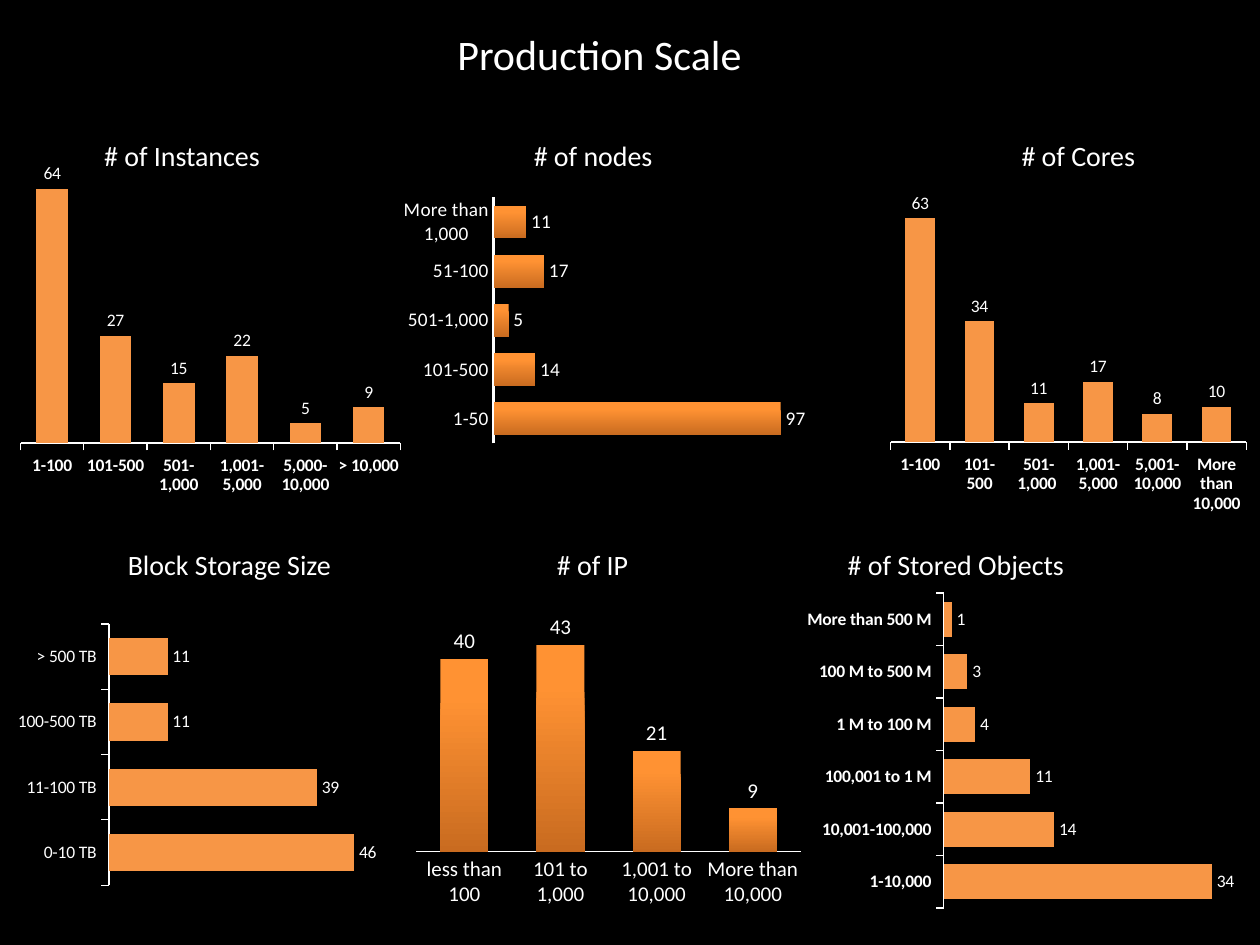
import pptx
import pptx.chart.data
import pptx.dml.color
import pptx.enum.chart
import pptx.enum.text
import pptx.util
from dataclasses import dataclass

SLIDE_W, SLIDE_H = 10, 7.5
FONT = "Calibri"
WHITE, BLACK, ORANGE = "FFFFFF", "000000", "F79646"
GLOW_TOP, GLOW_BOTTOM = "FF9233", "C96B20"
TOP_ROW, BOTTOM_ROW = 14, 57.33  # percent of the slide height
HEADING_HEIGHT = 4.93
PLOT_MARGIN = 0.02

COLUMN = pptx.enum.chart.XL_CHART_TYPE.COLUMN_CLUSTERED
BAR = pptx.enum.chart.XL_CHART_TYPE.BAR_CLUSTERED


@dataclass
class Panel:
    heading: str
    box: tuple            # left, top, width, height in percent of the slide
    heading_span: tuple   # shift and width as shares of the panel width
    chart_drop: float     # chart top as a share of the panel height
    kind: object
    counts: dict
    axis_max: int
    label_share: float    # part of the chart kept for category labels
    gap: int
    size: int = 10
    bold: bool = False
    ticks: bool = True
    glow: bool = False
    axis_width: float = 0.75
    centered: bool = False


PANELS = [
    Panel("# of Cores", (70.1, TOP_ROW, 29.4, 41.33), (0.34, 0.38), 0.14, COLUMN,
          {"1-100": 63, "101-500": 34, "501-1,000 ": 11, "1,001-5,000": 17,
           "5,001-10,000": 8, "More than 10,000": 10},
          70, 0.22, 100, bold=True),
    Panel("# of Instances", (1, TOP_ROW, 31.4, 39.07), (0.2, 0.46), 0.07, COLUMN,
          {"1-100": 64, "101-500": 27, "501-1,000": 15, "1,001-5,000": 22,
           "5,000-10,000": 5, "> 10,000": 9},
          70, 0.15, 100, bold=True),
    Panel("# of Stored Objects", (63.3, BOTTOM_ROW, 37.4, 39.47), (0.08, 0.52), 0.12, BAR,
          {"1-10,000": 34, "10,001-100,000": 14, "100,001 to 1 M": 11,
           "1 M to 100 M": 4, "100 M to 500 M": 3, "More than 500 M": 1},
          40, 0.29, 50, bold=True),
    Panel("Block Storage Size ", (1, BOTTOM_ROW, 29.4, 36.93), (0.27, 0.63), 0.22, BAR,
          {"0-10 TB": 46, "11-100 TB": 39, "100-500 TB": 11, "> 500 TB": 11},
          50, 0.24, 75, centered=True),
    Panel("# of IP", (32.4, BOTTOM_ROW, 31.8, 39.33), (0.34, 0.24), 0.17, COLUMN,
          {"less than 100": 40, "101 to 1,000": 43, "1,001 to 10,000": 21,
           "More than 10,000": 9},
          50, 0.18, 100, size=12, ticks=False, glow=True),
    Panel("# of nodes", (31.5, TOP_ROW, 36.6, 33.47), (0.27, 0.32), 0.19, BAR,
          {"1-50": 97, "101-500": 14, "501-1,000": 5, "51-100": 17,
           "More than 1,000": 11},
          120, 0.19, 50, size=11, ticks=False, glow=True, axis_width=1.5),
]


def color(hex_string):
    return pptx.dml.color.RGBColor.from_string(hex_string)


def place(left, top, width, height):
    """Turn percentages of the slide into lengths."""
    return [pptx.util.Inches(share * side / 100) for share, side in
            zip((left, top, width, height), (SLIDE_W, SLIDE_H) * 2)]


def style_font(font, size, bold=False):
    font.name = FONT
    font.size = pptx.util.Pt(size)
    font.bold = bold
    font.color.rgb = color(WHITE)


def write_line(frame, text, size, centered=False):
    frame.word_wrap = False
    frame.auto_size = pptx.enum.text.MSO_AUTO_SIZE.SHAPE_TO_FIT_TEXT
    frame.vertical_anchor = pptx.enum.text.MSO_ANCHOR.TOP
    align = pptx.enum.text.PP_ALIGN
    paragraph = frame.paragraphs[0]
    paragraph.alignment = align.CENTER if centered else align.LEFT
    run = paragraph.add_run()
    run.text = text
    style_font(run.font, size)


def fix_plot(chart, panel):
    """Set the inner plot area, leaving room for the category labels."""
    full = 1 - 2 * PLOT_MARGIN
    rest = full - panel.label_share
    if panel.kind == BAR:
        shares = (PLOT_MARGIN + panel.label_share, PLOT_MARGIN, rest, full)
    else:
        shares = (PLOT_MARGIN, PLOT_MARGIN, full, rest)
    settings = [("layoutTarget", "inner"), ("xMode", "edge"), ("yMode", "edge")]
    settings += zip("xywh", (f"{share:.2f}" for share in shares))
    parts = "".join(f'<c:{tag} val="{value}"/>' for tag, value in settings)
    layout = pptx.oxml.parse_xml(
        '<c:layout xmlns:c="http://schemas.openxmlformats.org/drawingml/2006/chart">'
        f"<c:manualLayout>{parts}</c:manualLayout></c:layout>")
    plot_area = chart.plots[0]._element.getparent()
    for old in plot_area.findall(layout.tag):
        plot_area.remove(old)
    plot_area.insert(0, layout)


def style_axes(chart, panel):
    tick = pptx.enum.chart.XL_TICK_MARK
    categories = chart.category_axis
    categories.has_major_gridlines = False
    categories.major_tick_mark = tick.OUTSIDE if panel.ticks else tick.NONE
    categories.format.line.color.rgb = color(WHITE)
    categories.format.line.width = pptx.util.Pt(panel.axis_width)
    style_font(categories.tick_labels.font, panel.size, panel.bold)
    values = chart.value_axis
    values.has_major_gridlines = False
    values.minimum_scale, values.maximum_scale = 0, panel.axis_max
    values.visible = False


def style_bars(plot, panel):
    plot.vary_by_categories = False
    plot.gap_width = panel.gap
    plot.overlap = -25 if panel.glow else 0
    fill = plot.series[0].format.fill
    if panel.glow:
        fill.gradient()
        fill.gradient_angle = 270
        top, bottom = fill.gradient_stops
        top.color.rgb, bottom.color.rgb = color(GLOW_TOP), color(GLOW_BOTTOM)
        top.position = 0.2
    else:
        fill.solid()
        fill.fore_color.rgb = color(ORANGE)
    plot.has_data_labels = True
    labels = plot.data_labels
    labels.show_value = True
    labels.position = pptx.enum.chart.XL_LABEL_POSITION.OUTSIDE_END
    style_font(labels.font, panel.size)


def draw_panel(slide, panel):
    left, top, width, height = panel.box

    # Chart
    data = pptx.chart.data.CategoryChartData()
    data.categories = list(panel.counts)
    data.add_series("Series 1", list(panel.counts.values()))
    drop = height * panel.chart_drop
    chart = slide.shapes.add_chart(
        panel.kind, *place(left, top + drop, width, height - drop), data).chart
    chart.has_title = False
    chart.has_legend = False
    style_font(chart.font, panel.size)
    style_axes(chart, panel)
    style_bars(chart.plots[0], panel)
    fix_plot(chart, panel)

    # Heading
    shift, span = panel.heading_span
    heading = slide.shapes.add_textbox(
        *place(left + width * shift, top, width * span, HEADING_HEIGHT))
    write_line(heading.text_frame, panel.heading, 16, panel.centered)


def draw_title(slide, box):
    title = slide.shapes.title
    title.left, title.top, title.width, title.height = place(*box)
    write_line(title.text_frame, "Production Scale", 24)


def main():
    deck = pptx.Presentation()
    deck.slide_width = pptx.util.Inches(SLIDE_W)
    deck.slide_height = pptx.util.Inches(SLIDE_H)
    slide = deck.slides.add_slide(deck.slide_layouts.get_by_name("Title Only"))
    slide.background.fill.solid()
    slide.background.fill.fore_color.rgb = color(BLACK)
    draw_title(slide, (35.3, 2.4, 24.9, 6.67))
    for panel in PANELS:
        draw_panel(slide, panel)
    deck.save("out.pptx")


if __name__ == "__main__":
    main()
